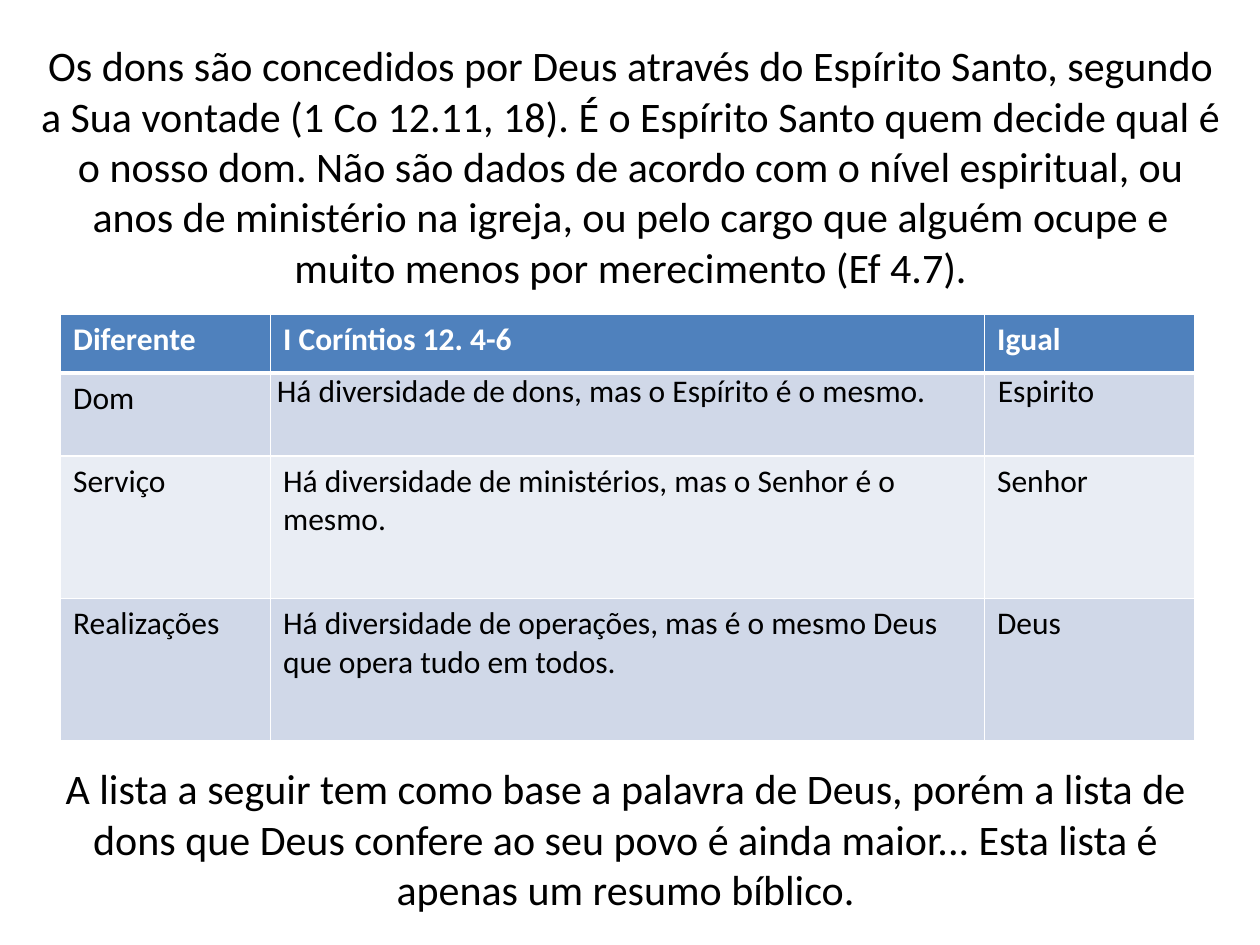
from dataclasses import dataclass

from lxml.etree import SubElement
from pptx import Presentation
from pptx.dml.color import RGBColor
from pptx.enum.text import MSO_ANCHOR, PP_ALIGN
from pptx.oxml.ns import qn
from pptx.util import Pt


@dataclass(frozen=True)
class Theme:
    font: str = "Calibri"
    body_size: float = 24
    table_size: float = 18
    text: str = "000000"
    header_text: str = "FFFFFF"
    header_fill: str = "4F81BD"
    band_fills: tuple = ("D0D8E8", "E9EDF4")
    border: str = "FFFFFF"


THEME = Theme()

INTRO = (
    "Os dons são concedidos por Deus através do Espírito Santo, segundo a Sua vontade "
    "(1 Co 12.11, 18). É o Espírito Santo quem decide qual é o nosso dom. Não são dados "
    "de acordo com o nível espiritual, ou anos de ministério na igreja, ou pelo cargo que "
    "alguém ocupe e muito menos por merecimento (Ef 4.7)."
)
CLOSING = (
    "A lista a seguir tem como base a palavra de Deus, porém a lista de dons que Deus "
    "confere ao seu povo é ainda maior... Esta lista é apenas um resumo bíblico."
)
GIFTS = [
    ("Diferente", "I Coríntios 12. 4-6", "Igual"),
    ("Dom", "Há diversidade de dons, mas o Espírito é o mesmo.", "Espirito"),
    ("Serviço", "Há diversidade de ministérios, mas o Senhor é o mesmo.", "Senhor"),
    ("Realizações", "Há diversidade de operações, mas é o mesmo Deus que opera tudo em todos.",
     "Deus"),
]
COLUMN_WIDTHS = (120, 408, 120)
ROW_HEIGHTS = (33.6, 47.5, 81.3, 81.3)
# Cells set tight to the top, with their left margin
TIGHT_CELLS = {(1, 1): 3.6, (1, 2): 7.6}


def write_text(frame, text, size=THEME.body_size, color=THEME.text, bold=False,
               align=PP_ALIGN.LEFT):
    paragraph = frame.paragraphs[0]
    paragraph.alignment = align
    run = paragraph.add_run()
    run.text = text
    run.font.name = THEME.font
    run.font.size = Pt(size)
    run.font.bold = bold
    run.font.color.rgb = RGBColor.from_string(color)


def add_statement(slide, text, left, top, width, height):
    frame = slide.shapes.add_textbox(Pt(left), Pt(top), Pt(width), Pt(height)).text_frame
    frame.word_wrap = True
    frame.vertical_anchor = MSO_ANCHOR.MIDDLE
    write_text(frame, text, align=PP_ALIGN.CENTER)


def set_borders(cell, row):
    # The rule between header and body is heavier
    widths = {"L": 1, "R": 1, "T": 3 if row == 1 else 1, "B": 3 if row == 0 else 1}
    properties = cell._tc.get_or_add_tcPr()
    for side, width in widths.items():
        line = SubElement(properties, qn(f"a:ln{side}"), w=str(Pt(width)))
        fill = SubElement(line, qn("a:solidFill"))
        SubElement(fill, qn("a:srgbClr"), val=THEME.border)


def format_cell(cell, text, row, column):
    is_header = row == 0
    set_borders(cell, row)
    cell.fill.solid()
    fill = THEME.header_fill if is_header else THEME.band_fills[(row - 1) % 2]
    cell.fill.fore_color.rgb = RGBColor.from_string(fill)
    if (row, column) in TIGHT_CELLS:
        cell.margin_left = Pt(TIGHT_CELLS[row, column])
        cell.margin_right = Pt(3.6)
        cell.margin_top = cell.margin_bottom = Pt(0)
    write_text(cell.text_frame, text, size=THEME.table_size, bold=is_header,
               color=THEME.header_text if is_header else THEME.text)


def add_gifts_table(slide, left, top):
    table = slide.shapes.add_table(
        len(GIFTS), len(COLUMN_WIDTHS), Pt(left), Pt(top),
        Pt(sum(COLUMN_WIDTHS)), Pt(sum(ROW_HEIGHTS))).table
    for column, width in zip(table.columns, COLUMN_WIDTHS):
        column.width = Pt(width)
    for row, height in zip(table.rows, ROW_HEIGHTS):
        row.height = Pt(height)
    for row, texts in enumerate(GIFTS):
        for column, text in enumerate(texts):
            format_cell(table.cell(row, column), text, row, column)


def main():
    presentation = Presentation()
    presentation.slide_width, presentation.slide_height = Pt(720), Pt(540)
    slide = presentation.slides.add_slide(presentation.slide_layouts[6])

    # Opening statement, comparison table, closing statement
    add_statement(slide, INTRO, 14.4, 21.6, 692, 146)
    add_gifts_table(slide, 34.6, 179.5)
    add_statement(slide, CLOSING, 11.5, 434, 692, 90)

    presentation.save("out.pptx")


if __name__ == "__main__":
    main()
